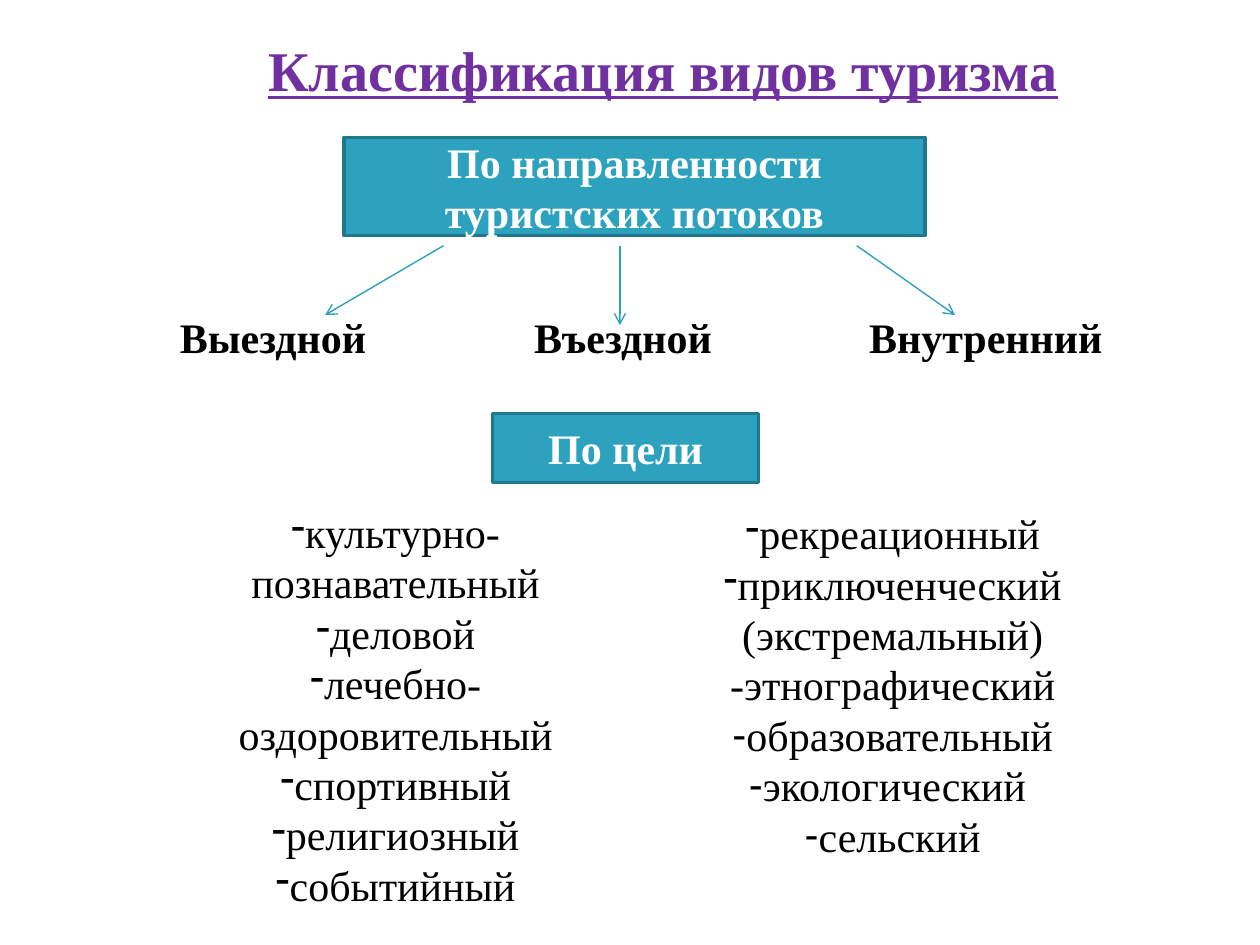
from dataclasses import dataclass

from lxml import etree
from pptx import Presentation, util as u
from pptx.dml.color import RGBColor
from pptx.enum import shapes, text
from pptx.oxml.ns import qn


@dataclass(frozen=True)
class Theme:
    font: str = "Times New Roman"
    title_size: int = 32
    text_size: int = 24
    title: str = "7030A0"
    ink: str = "000000"
    light: str = "FFFFFF"
    fill: str = "2DA2BF"
    border: str = "21788D"
    border_width: float = 2
    arrow_width: float = 0.79


THEME = Theme()
COLUMNS, ROWS = 100, 75  # grid of the slide
CELL = u.Inches(0.1)

PURPOSES_LEFT = ["культурно-познавательный", "деловой", "лечебно-оздоровительный",
                 "спортивный", "религиозный", "событийный"]
PURPOSES_RIGHT = ["рекреационный", "приключенческий", "(экстремальный)", "-этнографический",
                  "образовательный", "экологический ", "сельский"]
UNBULLETED = {"(экстремальный)", "-этнографический"}


def grid(*cells):
    return [round(cell * CELL) for cell in cells]


def place(shape, cells):
    shape.left, shape.top, shape.width, shape.height = grid(*cells)


def add_run(paragraph, words, color, size=THEME.text_size, bold=False, underline=False):
    run = paragraph.add_run()
    run.text = words
    font = run.font
    font.name, font.size = THEME.font, u.Pt(size)
    font.bold, font.underline = bold, underline
    font.color.rgb = RGBColor.from_string(color)


def prepare_frame(shape, wrap):
    frame = shape.text_frame
    frame.word_wrap = wrap
    frame.auto_size = text.MSO_AUTO_SIZE.NONE
    frame.vertical_anchor = text.MSO_ANCHOR.TOP
    return frame


def set_bullet(paragraph, character):
    properties = paragraph._p.get_or_add_pPr()
    properties.set("marL", "0")
    properties.set("indent", "0")
    if character:
        etree.SubElement(properties, qn("a:buFontTx"))
        etree.SubElement(properties, qn("a:buChar"), char=character)
    else:
        etree.SubElement(properties, qn("a:buNone"))


def fill_title(slide, words, cells):
    title = slide.shapes.title
    place(title, cells)
    paragraph = prepare_frame(title, wrap=False).paragraphs[0]
    paragraph.alignment = text.PP_ALIGN.LEFT
    add_run(paragraph, words, THEME.title, THEME.title_size, bold=True, underline=True)


def fill_list(placeholder, items, cells, wrap):
    place(placeholder, cells)
    frame = prepare_frame(placeholder, wrap)
    for index, item in enumerate(items):
        paragraph = frame.add_paragraph() if index else frame.paragraphs[0]
        paragraph.alignment = text.PP_ALIGN.CENTER
        paragraph.space_before = u.Pt(0)
        set_bullet(paragraph, None if item in UNBULLETED else "-")
        add_run(paragraph, item, THEME.ink)


def add_heading_box(slide, words, cells):
    box = slide.shapes.add_shape(shapes.MSO_SHAPE.RECTANGLE, *grid(*cells))
    box.shadow.inherit = False
    box.fill.solid()
    box.fill.fore_color.rgb = RGBColor.from_string(THEME.fill)
    box.line.color.rgb = RGBColor.from_string(THEME.border)
    box.line.width = u.Pt(THEME.border_width)
    frame = box.text_frame
    frame.word_wrap = True
    frame.vertical_anchor = text.MSO_ANCHOR.MIDDLE
    frame.paragraphs[0].alignment = text.PP_ALIGN.CENTER
    add_run(frame.paragraphs[0], words, THEME.light, bold=True)


def add_label(slide, words, cells):
    label = slide.shapes.add_textbox(*grid(*cells))
    add_run(prepare_frame(label, wrap=False).paragraphs[0], words, THEME.ink, bold=True)


def add_arrow(slide, start, end):
    arrow = slide.shapes.add_connector(shapes.MSO_CONNECTOR.STRAIGHT, *grid(*start, *end))
    arrow.line.color.rgb = RGBColor.from_string(THEME.fill)
    arrow.line.width = u.Pt(THEME.arrow_width)
    etree.SubElement(arrow.line._get_or_add_ln(), qn("a:tailEnd"), type="arrow")
    etree.SubElement(arrow._element.spPr, qn("a:effectLst"))


def main():
    presentation = Presentation()
    presentation.slide_width, presentation.slide_height = grid(COLUMNS, ROWS)
    slide = presentation.slides.add_slide(presentation.slide_layouts.get_by_name("Two Content"))
    fill_title(slide, "Классификация видов туризма", (20.3, 2.3, 66.4, 6.4))

    # Tourism by direction of flows
    add_heading_box(slide, "По направленности туристских потоков", (27.3, 10.9, 46.1, 7.8))
    directions = [("Выездной", 13.3, 16.9, 35.2, (25.8, 25)),
                  ("Въездной", 41.4, 16.3, 49.2, (49.2, 25.8)),
                  ("Внутренний", 68, 20.7, 68, (75.8, 25))]
    for words, left, width, arrow_start, arrow_end in directions:
        add_label(slide, words, (left, 24.2, width, 5))
        add_arrow(slide, (arrow_start, 19.5), arrow_end)

    # Tourism by purpose
    add_heading_box(slide, "По цели", (39.1, 32.8, 21.1, 5.5))
    fill_list(slide.placeholders[1], PURPOSES_LEFT, (15.6, 39.7, 31.6, 39.4), wrap=True)
    fill_list(slide.placeholders[2], PURPOSES_RIGHT, (56.3, 39.8, 29.1, 29.3), wrap=False)

    presentation.save("out.pptx")


if __name__ == "__main__":
    main()
